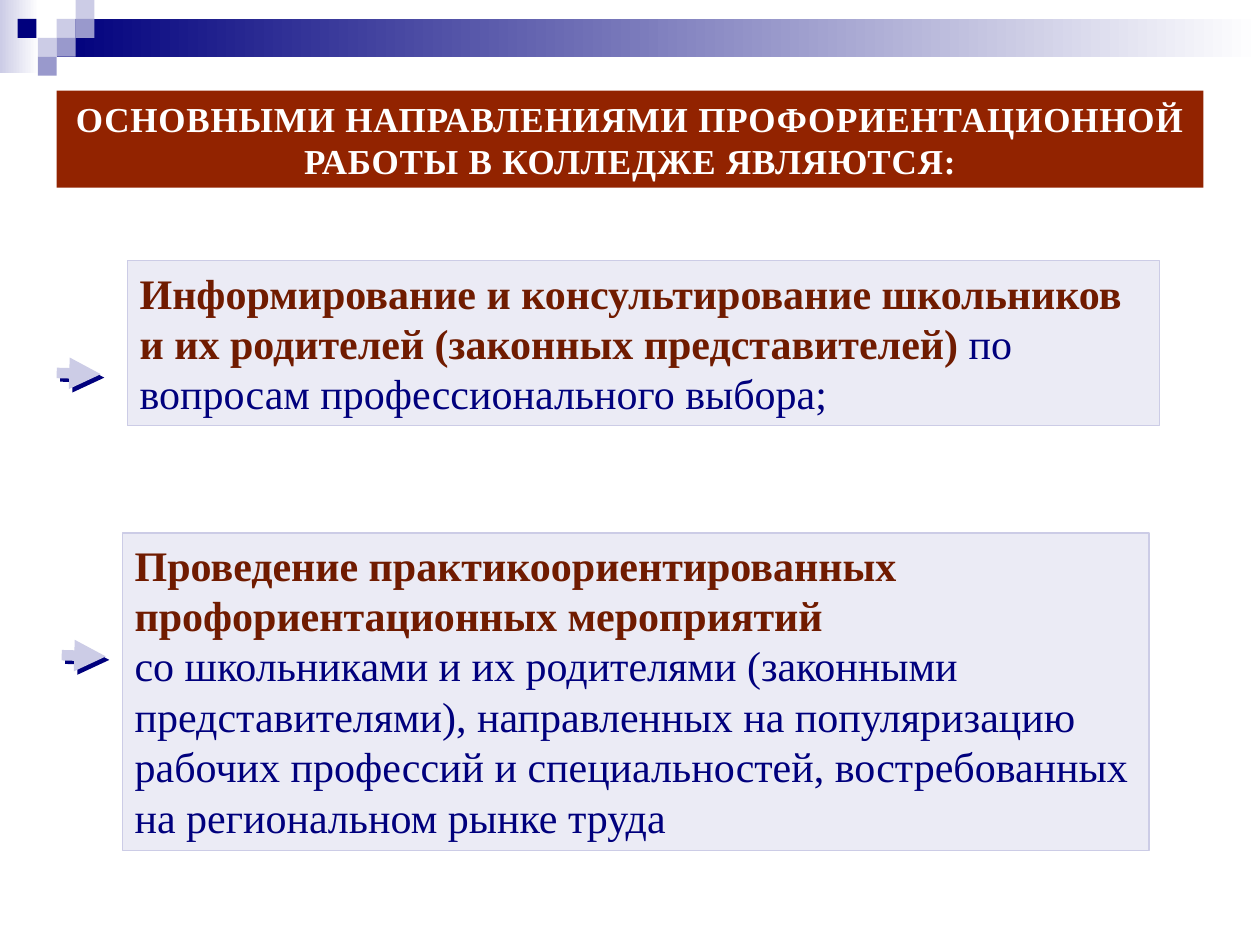
"""Builds a slide on the main directions of career guidance work in a college."""
from lxml import etree
from pptx import Presentation
from pptx.dml.color import RGBColor
from pptx.enum.shapes import MSO_CONNECTOR, MSO_SHAPE
from pptx.enum.text import MSO_ANCHOR, MSO_AUTO_SIZE, PP_ALIGN
from pptx.oxml import parse_xml
from pptx.util import Inches, Pt

RECT = MSO_SHAPE.RECTANGLE
STRAIGHT = MSO_CONNECTOR.STRAIGHT
CENTER, LEFT = PP_ALIGN.CENTER, PP_ALIGN.LEFT
MIDDLE, TOP = MSO_ANCHOR.MIDDLE, MSO_ANCHOR.TOP
NO_FIT = MSO_AUTO_SIZE.NONE
NS = "http://schemas.openxmlformats.org/drawingml/2006/main"

THEME = {
    "font": "Times New Roman", "title_size": 20, "body_size": 24,
    "white": "FFFFFF", "navy": "00007D", "lilac": "CCCCE6", "violet": "9999CC",
    "panel": "EBEBF5", "banner": "922300", "accent": "701B00",
}

TITLE = "ОСНОВНЫМИ НАПРАВЛЕНИЯМИ ПРОФОРИЕНТАЦИОННОЙ РАБОТЫ В КОЛЛЕДЖЕ ЯВЛЯЮТСЯ:"
TITLE_BOX = (0.45, 0.72, 9.1, 0.77)
TITLE_TRACKING = 45

DIRECTIONS = [
    {"box": (1.01, 2.07, 8.19, 1.31), "arrow": (0.45, 2.96),
     "text": [[("Информирование и консультирование школьников и их родителей "
                "(законных представителей) ", "accent"),
               ("по вопросам профессионального выбора;", "navy")]]},
    {"box": (0.97, 4.23, 8.15, 2.52), "arrow": (0.49, 5.2),
     "text": [[("Проведение практикоориентированных профориентационных мероприятий",
                "accent")],
              [("со школьниками и их родителями (законными представителями), "
                "направленных на популяризацию рабочих профессий и специальностей, "
                "востребованных на региональном рынке труда", "navy")]]},
]
ARROW_SPAN = (0.35, 0.01)

GRADIENT_BARS = [((0, 0, 0.31, 0.58), "lilac"), ((0.45, 0.15, 9.55, 0.3), "navy")]
TILE = 0.15
TILES = [(3, 1, "lilac"), (4, 0, "lilac"), (4, 1, "violet"), (2, 2, "lilac"),
         (0.93, 1, "navy"), (3, 2, "violet"), (2, 3, "violet")]


def color(name):
    return RGBColor.from_string(THEME[name])


def inches(values):
    return [Inches(v) for v in values]


def add_block(s, box):
    sp = s.shapes.add_shape(RECT, *inches(box))
    sp.shadow.inherit = False
    sp.line.fill.background()
    return sp


def add_decoration(s):
    for box, name in GRADIENT_BARS:
        fill = add_block(s, box).fill
        fill.gradient()
        fill.gradient_angle = 0
        for stop, key in zip(fill.gradient_stops, (name, "white")):
            stop.color.rgb = color(key)
    for col, row, name in TILES:
        fill = add_block(s, (col * TILE, row * TILE, TILE, TILE)).fill
        fill.solid()
        fill.fore_color.rgb = color(name)


def fill_text(sp, paragraphs, size, align, anchor):
    tf = sp.text_frame
    tf.word_wrap = True
    tf.auto_size = NO_FIT
    tf.vertical_anchor = anchor
    for i, runs in enumerate(paragraphs):
        p = tf.paragraphs[0] if i == 0 else tf.add_paragraph()
        p.alignment = align
        p.font.name = THEME["font"]
        p.font.size = Pt(THEME[size])
        for text, name in runs:
            r = p.add_run()
            r.text = text
            r.font.name = THEME["font"]
            r.font.size = Pt(THEME[size])
            r.font.bold = name != "navy"
            r.font.color.rgb = color(name)


def add_title(s):
    sp = s.shapes.title
    sp.left, sp.top, sp.width, sp.height = inches(TITLE_BOX)
    sp.fill.solid()
    sp.fill.fore_color.rgb = color("banner")
    fill_text(sp, [[(TITLE, "white")]], "title_size", CENTER, MIDDLE)
    r = sp.text_frame.paragraphs[0].runs[0]
    r.font._element.set("spc", str(TITLE_TRACKING))


def add_panel(s, box, paragraphs):
    sp = s.shapes.add_textbox(*inches(box))
    sp.fill.solid()
    sp.fill.fore_color.rgb = color("panel")
    sp.line.color.rgb = color("lilac")
    sp.line.width = Pt(0.75)
    fill_text(sp, paragraphs, "body_size", LEFT, TOP)


def add_arrow(s, start):
    end = [a + d for a, d in zip(start, ARROW_SPAN)]
    cx = s.shapes.add_connector(STRAIGHT, *inches((*start, *end)))
    cx.line.color.rgb = color("lilac")
    cx.line.width = Pt(6)
    etree.SubElement(cx.line._get_or_add_ln(), f"{{{NS}}}tailEnd", type="triangle")
    cx._element.spPr.append(parse_xml(
        f'<a:effectLst xmlns:a="{NS}"><a:outerShdw dist="{Pt(2.8)}" dir="2700000" '
        f'algn="ctr" rotWithShape="0"><a:srgbClr val="{THEME["navy"]}"/>'
        '</a:outerShdw></a:effectLst>'))


def main():
    prs = Presentation()
    prs.slide_width, prs.slide_height = Inches(10), Inches(7.5)
    s = prs.slides.add_slide(prs.slide_layouts[5])
    add_decoration(s)
    add_title(s)
    for item in DIRECTIONS:
        add_panel(s, item["box"], item["text"])
    for item in DIRECTIONS:
        add_arrow(s, item["arrow"])
    prs.save("out.pptx")


if __name__ == "__main__":
    main()
